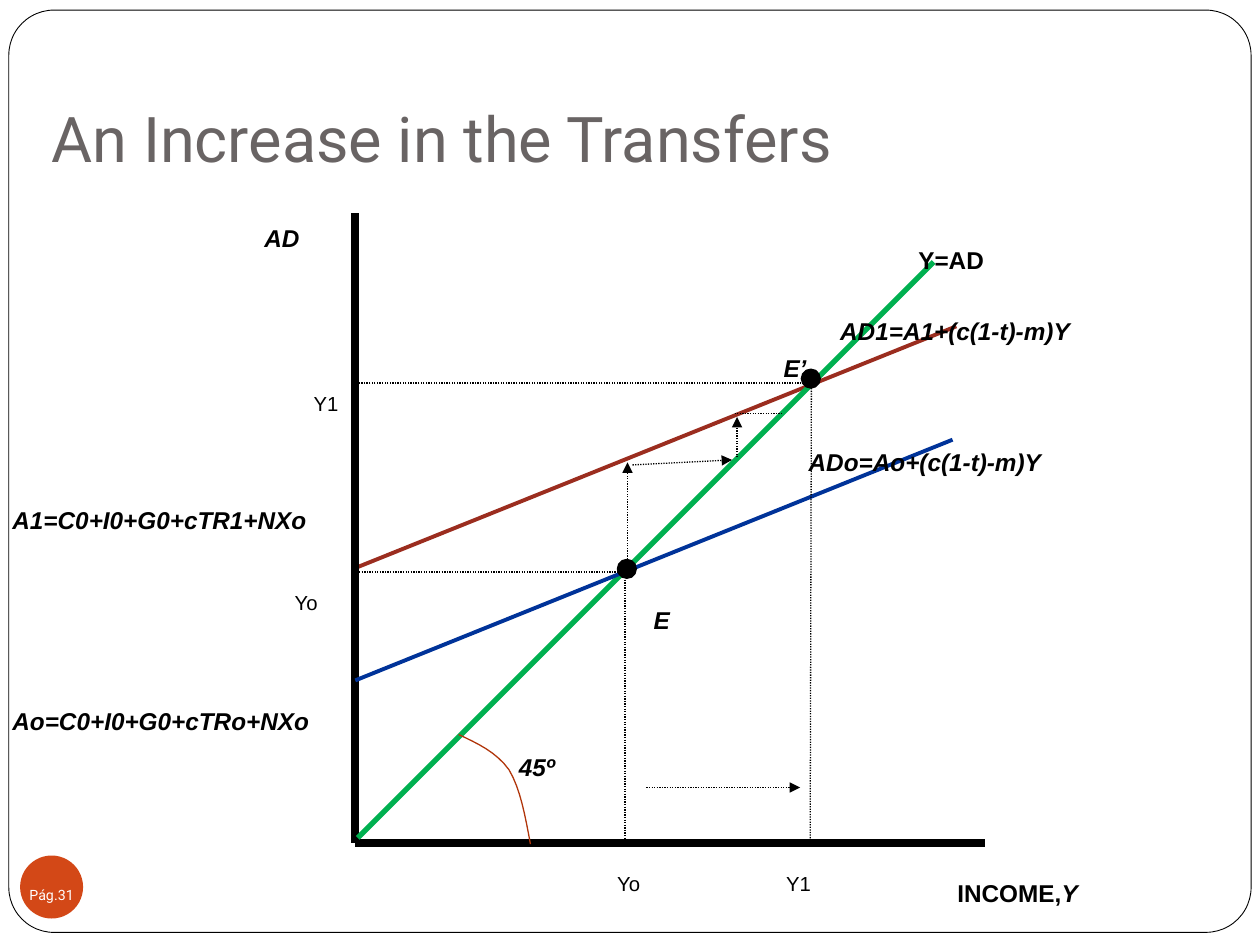
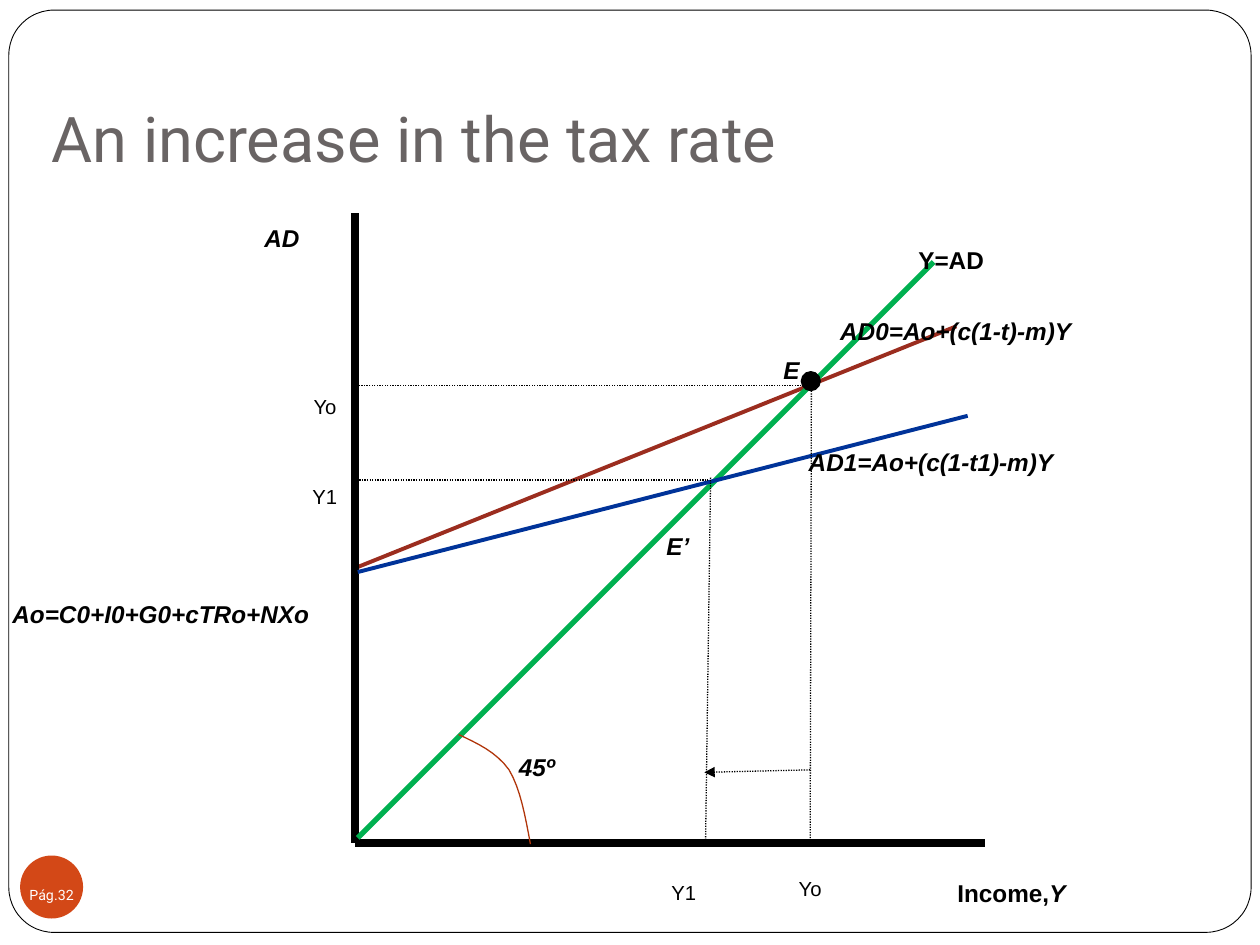
"""Build two slides on how aggregate demand shifts move income."""
from dataclasses import dataclass
from typing import Any

from lxml.etree import SubElement
from pptx import Presentation
from pptx.dml.color import RGBColor
from pptx.enum.dml import MSO_LINE
from pptx.enum.shapes import MSO_CONNECTOR, MSO_SHAPE
from pptx.enum.text import MSO_ANCHOR, MSO_AUTO_SIZE, PP_ALIGN
from pptx.oxml.ns import qn
from pptx.util import Emu, Pt

HUES = {"white": "FFFFFF", "black": "000000", "title": "696464", "badge": "D34817",
        "rust": "9B2D1F", "blue": "003399", "green": "00B050", "arc": "B1360B"}
COLS, ROWS = 10, 7.5
DECK = Presentation()
DECK.slide_width, DECK.slide_height = Emu(9144000), Emu(6858000)
CELL = DECK.slide_width / COLS
LEFT, BASE, SPAN = 2.82, 6.69, 5
DOT = 0.15
INSET = 0.1
BOLD = {"size": Pt(24), "name": "Arial", "bold": True}
SLANT = BOLD | {"italic": True}
PLAIN = {"size": Pt(20), "name": "Arial"}
SMALL = {"size": Pt(14), "name": "Roboto"}
HEAD = {"size": Pt(36), "name": "Roboto"}
DOTTED = {"width": Pt(0.75), "dash_style": MSO_LINE.ROUND_DOT}


@dataclass(frozen=True)
class Label:
    """Text placed on the grid by its box's left, top and width."""
    text: str
    x: float
    y: float
    wide: float
    form: dict[str, Any]
    tail: str = ""


@dataclass(frozen=True)
class Line:
    """A straight line between two grid points."""
    x1: float
    y1: float
    x2: float
    y2: float
    hue: str = "black"
    width: float = 0
    arrow: bool = False


@dataclass(frozen=True)
class Page:
    """All that differs from slide to slide."""
    title: str
    number: int
    income: str
    lines: list[Line]
    dots: list[tuple[float, float]]
    labels: list[Label]


RUST = Line(2.84, 4.5, 7.59, 2.59, "rust", 2.25)
AXES = [Line(LEFT, BASE, LEFT + SPAN, BASE, width=4.5),
        Line(LEFT, BASE, LEFT, BASE - SPAN, width=4.5),
        Line(2.84, 6.65, 7.41, 2.08, "green", 3)]
NAMES = [Label("AD", 2, 1.5, 0.69, SLANT),
         Label("Y=AD", 7.19, 1.67, 1.11, BOLD),
         Label("45º", 4.02, 5.7, 0.7, SLANT)]
ARC = [[(3.64, 5.83), (3.79, 5.9), (3.94, 5.97), (4.04, 6.11)],
       [(4.04, 6.11), (4.13, 6.26), (4.17, 6.48), (4.21, 6.7)]]

PAGES = [
    Page("An Increase in the Transfers", 31, "INCOME,",
         [Line(LEFT, 5.4, 7.56, 3.49, "blue", 2.25),
          Line(4.98, 4.46, 4.98, 3.67, arrow=True),
          Line(2.85, 4.54, 4.96, 4.54),
          Line(4.96, 4.58, 4.96, 6.67),
          Line(6.44, 3.04, 6.43, 6.68),
          Line(6.44, 3.04, LEFT, 3.04),
          Line(5.83, 3.28, 6.21, 3.28),
          Line(5.13, 6.25, 6.35, 6.25, arrow=True),
          Line(5.85, 3.63, 5.85, 3.31, arrow=True),
          Line(5.02, 3.69, 5.81, 3.65, arrow=True)],
         [(4.9, 4.44), (6.36, 2.93)],
         [Label("Yo", 4.8, 6.68, 0.57, PLAIN),
          Label("Y1", 6.14, 6.68, 0.85, PLAIN),
          Label("Yo", 2.24, 4.45, 0.52, PLAIN),
          Label("Y1", 2.39, 2.87, 0.49, PLAIN),
          Label("E", 5.09, 4.53, 0.44, SLANT),
          Label("E’", 6.12, 2.53, 0.52, SLANT),
          Label("AD1=A1+(c(1-t)-m)Y", 6.57, 2.24, 3.43, SLANT),
          Label("ADo=Ao+(c(1-t)-m)Y", 6.32, 3.28, 3.43, SLANT),
          Label("Ao=C0+I0+G0+cTRo+NXo", 0, 5.33, 4.21, SLANT),
          Label("A1=C0+I0+G0+cTR1+NXo", 0, 3.74, 4.21, SLANT)]),
    Page("An increase in the tax rate", 32, "Income,",
         [Line(2.84, 4.54, 7.68, 3.3, "blue", 2.25),
          Line(2.79, 3.81, 5.62, 3.81),
          Line(5.64, 3.79, 5.6, 6.66),
          Line(6.44, 3.06, 6.43, 6.7),
          Line(6.44, 3.06, LEFT, 3.06),
          Line(6.43, 6.11, 5.59, 6.13, arrow=True)],
         [(6.36, 2.95)],
         [Label("Yo", 6.24, 6.72, 0.57, PLAIN),
          Label("Y1", 5.23, 6.75, 0.85, PLAIN),
          Label("Y1", 2.38, 3.61, 0.52, PLAIN),
          Label("Yo", 2.39, 2.89, 0.47, PLAIN),
          Label("E’", 5.19, 3.94, 0.64, SLANT),
          Label("E", 6.12, 2.55, 0.43, SLANT),
          Label("AD0=Ao+(c(1-t)-m)Y", 6.57, 2.24, 3.43, SLANT),
          Label("AD1=Ao+(c(1-t1)-m)Y", 6.32, 3.28, 3.68, SLANT),
          Label("Ao=C0+I0+G0+cTRo+NXo", 0, 4.48, 4.21, SLANT)]),
]


def grid(*cells: float) -> list[Emu]:
    """Turn grid cells into lengths."""
    return [Emu(round(cell * CELL)) for cell in cells]


def paint(hue: str) -> RGBColor:
    """Look up a colour."""
    return RGBColor.from_string(HUES[hue])


def apply(thing: Any, form: dict[str, Any]) -> None:
    """Set each format value on an object."""
    for key, value in form.items():
        setattr(thing, key, value)


def write(para: Any, text: str, form: dict[str, Any], hue: str, low: bool = True) -> None:
    """Add a run of text, lowered as an index unless told otherwise."""
    run = para.add_run()
    run.text = text
    apply(run.font, form)
    run.font.color.rgb = paint(hue)
    if low:
        run._r.get_or_add_rPr().set("baseline", "-25000")


def draw_label(slide: Any, label: Label) -> None:
    """Draw a text label."""
    frame = slide.shapes.add_textbox(*grid(label.x, label.y, label.wide, 0.5)).text_frame
    apply(frame, {"word_wrap": True, "auto_size": MSO_AUTO_SIZE.SHAPE_TO_FIT_TEXT})
    para = frame.paragraphs[0]
    write(para, label.text, label.form, "black")
    if label.tail:
        write(para, label.tail, SLANT, "black")


def draw_line(slide: Any, line: Line) -> None:
    """Draw a solid line, or a dotted guide when no width is given."""
    ends = grid(line.x1, line.y1, line.x2, line.y2)
    link = slide.shapes.add_connector(MSO_CONNECTOR.STRAIGHT, *ends)
    link.line.color.rgb = paint(line.hue)
    apply(link.line, {"width": Pt(line.width)} if line.width else DOTTED)
    if line.arrow:
        SubElement(link.line._get_or_add_ln(), qn("a:tailEnd"), type="triangle")
    SubElement(link._element.spPr, qn("a:effectLst"))


def draw_shape(slide: Any, kind: MSO_SHAPE, box: list[Emu], fill: str, edge: float = 0) -> Any:
    """Draw a filled shape with an optional black edge."""
    shape = slide.shapes.add_shape(kind, *box)
    shape.shadow.inherit = False
    shape.fill.solid()
    shape.fill.fore_color.rgb = paint(fill)
    if edge:
        shape.line.color.rgb = paint("black")
        shape.line.width = Pt(edge)
    else:
        shape.line.fill.background()
    return shape


def draw_arc(slide: Any, steps: int = 8) -> None:
    """Draw the curve that marks the angle."""
    spots = []
    for bend in ARC:
        for step in range(steps + 1):
            t = step / steps
            parts = ((1 - t) ** 3, 3 * t * (1 - t) ** 2, 3 * t * t * (1 - t), t ** 3)
            spots.append(grid(*(sum(p * spot[axis] for p, spot in zip(parts, bend))
                                for axis in (0, 1))))
    pen = slide.shapes.build_freeform(*spots[0])
    pen.add_line_segments(spots[1:], close=False)
    arc = pen.convert_to_shape()
    arc.shadow.inherit = False
    arc.fill.background()
    arc.line.color.rgb = paint("arc")
    arc.line.width = Pt(0.75)


def draw_base(slide: Any, page: Page) -> None:
    """Draw the frame, the title and the page badge."""
    panel = draw_shape(slide, MSO_SHAPE.ROUNDED_RECTANGLE,
                       grid(0.07, 0.08, COLS - 0.14, ROWS - 0.18), "white", 0.5)
    panel.adjustments[0] = 0.049
    slide.shapes._spTree.insert(2, panel._element)

    title = slide.shapes.title
    apply(title, dict(zip(("left", "top", "width", "height"), grid(0.31, 0.24, 9.35, 1.25))))
    side, top = grid(INSET, INSET / 2)
    apply(title.text_frame, {"vertical_anchor": MSO_ANCHOR.BOTTOM, "word_wrap": True,
                             "auto_size": MSO_AUTO_SIZE.NONE, "margin_left": side,
                             "margin_right": side, "margin_top": top, "margin_bottom": side})
    para = title.text_frame.paragraphs[0]
    para.alignment = PP_ALIGN.LEFT
    write(para, page.title, HEAD, "title", low=False)

    badge = draw_shape(slide, MSO_SHAPE.OVAL, grid(0.16, 6.79, 0.5, 0.5), "badge")
    apply(badge.text_frame, {"vertical_anchor": MSO_ANCHOR.MIDDLE, "word_wrap": False,
                             "margin_left": 0, "margin_right": 0,
                             "margin_top": 0, "margin_bottom": 0})
    para = badge.text_frame.paragraphs[0]
    para.alignment = PP_ALIGN.CENTER
    write(para, f"Pág.{page.number}", SMALL, "white")


def draw_page(page: Page) -> None:
    """Draw one slide."""
    slide = DECK.slides.add_slide(DECK.slide_layouts[5])
    draw_base(slide, page)
    for line in [RUST, *AXES, *page.lines]:
        draw_line(slide, line)
    for x, y in page.dots:
        draw_shape(slide, MSO_SHAPE.OVAL, grid(x, y, DOT, DOT), "black", 0.75)
    draw_arc(slide)
    for label in [*NAMES, Label(page.income, 7.5, 6.7, 1.87, BOLD, "Y"), *page.labels]:
        draw_label(slide, label)


def main() -> None:
    """Draw every slide and save the deck."""
    for page in PAGES:
        draw_page(page)
    DECK.save("out.pptx")


if __name__ == "__main__":
    main()
